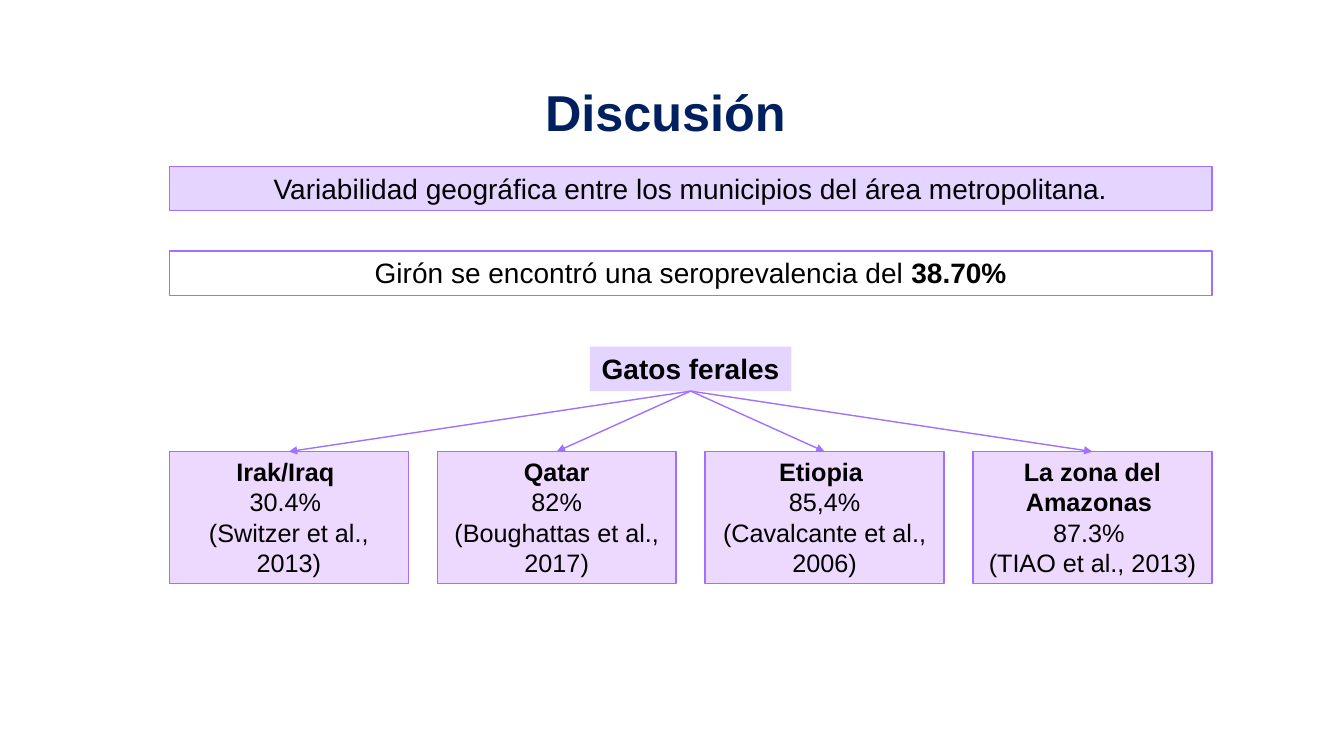
from lxml import etree
from pptx import Presentation
from pptx.dml.color import RGBColor
from pptx.enum.shapes import MSO_CONNECTOR, MSO_SHAPE
from pptx.enum.text import MSO_ANCHOR, PP_ALIGN
from pptx.oxml.ns import qn
from pptx.util import Inches, Pt

COLORS = {
    "title": "002060",
    "text": "000000",
    "lilac": "E3D5FF",
    "pink": "EED9FE",
    "white": "FFFFFF",
    "border": "A071FF",
}


def style_runs(p, size, color, bold):
    p.alignment = PP_ALIGN.CENTER
    for r in p.runs:
        r.font.name = "Arial"
        r.font.size = Pt(size)
        r.font.bold = bold
        r.font.color.rgb = RGBColor.from_string(COLORS[color])


def add_box(s, left, top, width, height, text, size, fill, border=True):
    sp = s.shapes.add_shape(MSO_SHAPE.RECTANGLE, Inches(left), Inches(top),
                            Inches(width), Inches(height))
    sp.shadow.inherit = False
    sp.fill.solid()
    sp.fill.fore_color.rgb = RGBColor.from_string(COLORS[fill])
    if border:
        sp.line.color.rgb = RGBColor.from_string(COLORS["border"])
        sp.line.width = Pt(1)
    else:
        sp.line.fill.background()
    tf = sp.text_frame
    tf.word_wrap = True
    tf.vertical_anchor = MSO_ANCHOR.TOP
    tf.text = text
    for p in tf.paragraphs:
        style_runs(p, size, "text", False)
    return sp


prs = Presentation()
prs.slide_width = Inches(13.33)
prs.slide_height = Inches(7.5)
s = prs.slides.add_slide(prs.slide_layouts[5])

title = s.shapes.title
title.left, title.top = Inches(0.36), Inches(0.66)
title.width, title.height = Inches(12.62), Inches(0.96)
title.text_frame.text = "Discusión "
title.text_frame.vertical_anchor = MSO_ANCHOR.MIDDLE
p = title.text_frame.paragraphs[0]
p.line_spacing = 0.9
style_runs(p, 36, "title", True)

LEFT, WIDTH = 1.68, 10.34
add_box(s, LEFT, 1.65, WIDTH, 0.44,
        "Variabilidad geográfica entre los municipios del área metropolitana.",
        20, "lilac")

giron = add_box(s, LEFT, 2.49, WIDTH, 0.44,
                "Girón se encontró una seroprevalencia del ", 20, "white")
p = giron.text_frame.paragraphs[0]
p.add_run().text = "38.70%"
style_runs(p, 20, "text", False)
p.runs[1].font.bold = True

cats = add_box(s, LEFT + WIDTH / 2 - 1, 3.44, 2, 0.44, "Gatos ferales", 20,
               "lilac", border=False)
cats.text_frame.paragraphs[0].runs[0].font.bold = True

studies = [
    ("Irak/Iraq ", "30.4% ", "(Switzer et al., 2013)"),
    ("Qatar", "82%", "(Boughattas et al., 2017)"),
    ("Etiopia ", "85,4%", "(Cavalcante et al., 2006)"),
    ("La zona del Amazonas ", "87.3% ", "(TIAO et al., 2013)"),
]
CARD_WIDTH = 2.37
pitch = (WIDTH - CARD_WIDTH) / (len(studies) - 1)

for i, study in enumerate(studies):
    card = add_box(s, LEFT + i * pitch, 4.48, CARD_WIDTH, 1.31,
                   "\n".join(study), 18, "pink")
    card.text_frame.paragraphs[0].runs[0].font.bold = True

    arrow = s.shapes.add_connector(MSO_CONNECTOR.STRAIGHT, 0, 0, 0, 0)
    arrow.begin_connect(cats, 2)
    arrow.end_connect(card, 0)
    arrow.line.color.rgb = RGBColor.from_string(COLORS["border"])
    arrow.line.width = Pt(1)
    etree.SubElement(arrow.line._get_or_add_ln(), qn("a:tailEnd"), type="triangle")
    etree.SubElement(arrow._element.spPr, qn("a:effectLst"))

prs.save("out.pptx")
